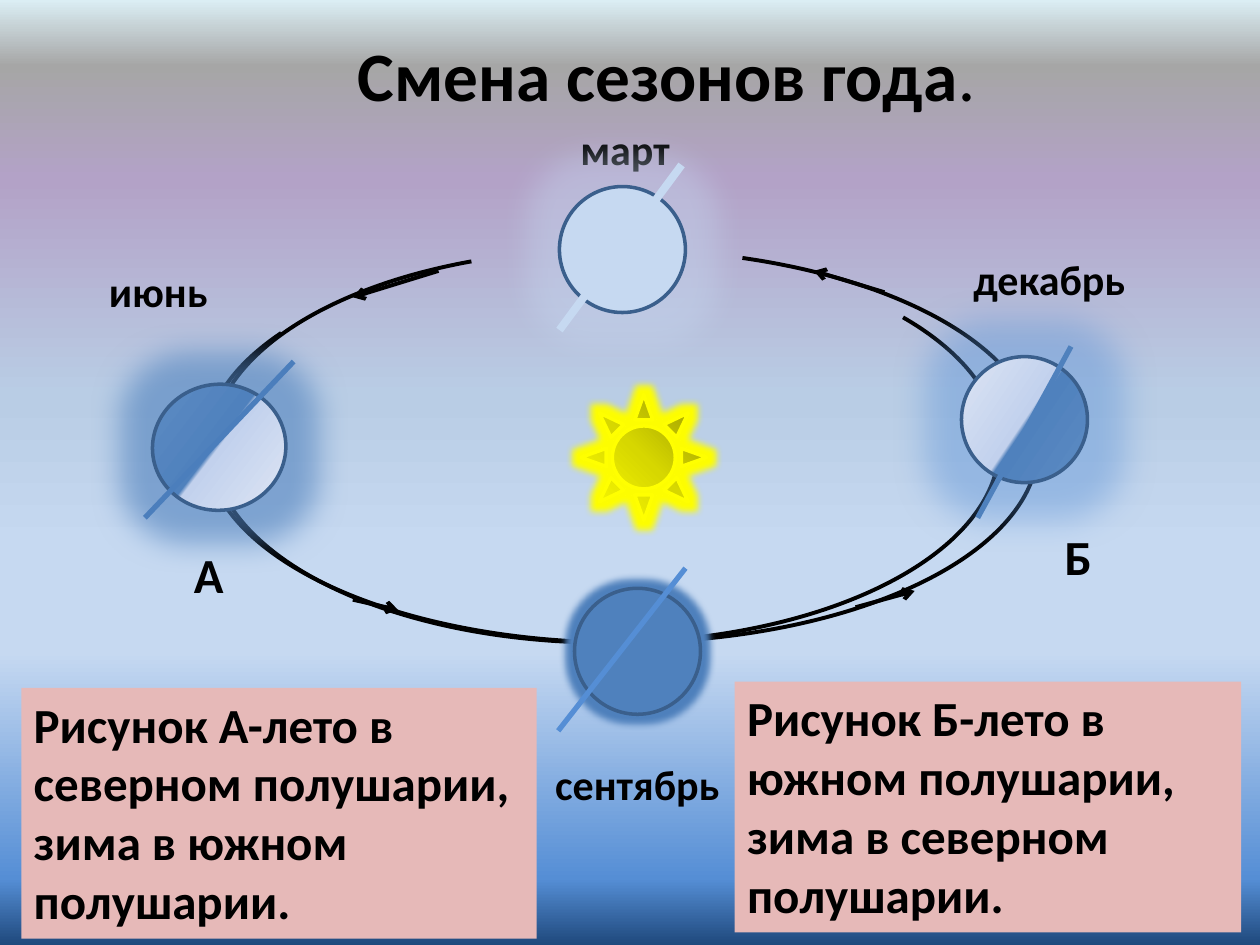
from lxml.etree import SubElement
from pptx import Presentation
from pptx.dml.color import RGBColor
from pptx.enum.shapes import MSO_CONNECTOR, MSO_SHAPE
from pptx.enum.text import MSO_ANCHOR, PP_ALIGN
from pptx.oxml.ns import qn
from pptx.util import Pt


def color(value):
    return RGBColor.from_string(value)


def set_gradient(fill, element, stops, angle):
    """Fill with (percent, colour) stops; the angle runs clockwise from the right."""
    fill.gradient()
    fill.gradient_angle = 360 - angle
    stop_list = next(element.iter(qn("a:gsLst")))
    for stop in list(stop_list):
        stop_list.remove(stop)
    for percent, value in stops:
        stop = SubElement(stop_list, qn("a:gs"), pos=str(percent * 1000))
        SubElement(stop, qn("a:srgbClr"), val=value)


deck = Presentation()
deck.slide_width, deck.slide_height = Pt(720), Pt(540)
page = deck.slides.add_slide(deck.slide_layouts[6])

sky = [(0, "1F497D"), (7, "558ED5"), (31, "C6D9F1"), (42, "C6D9F1"), (58, "B9CDE5"),
       (81, "B3A2C7"), (93, "A6A6A6"), (100, "DBEEF4")]
sunlight = [(0, "979700"), (50, "D7D700"), (100, "FFFF00")]
day_and_night = [(6, "5D8BC3"), (48, "4F81BD"), (50, "C2D1ED"), (100, "E1E8F5")]
set_gradient(page.background.fill, page._element, sky, 270)

# Orbit: left, top, width, height, start and end angle, rotation, flipped
orbit = [
    (117.4, 142.6, 475.9, 224.6, 161.64, 57.34, 0, True),
    (121, 142.6, 450, 224.6, 156.6, 54.02, 180, False),
]
for left, top, width, height, start, end, rotation, flipped in orbit:
    arc = page.shapes.add_shape(MSO_SHAPE.ARC, Pt(left), Pt(top), Pt(width), Pt(height))
    # Angles are stored in 1/60000 degree, adjustments in 1/100000
    arc.adjustments[0], arc.adjustments[1] = start * 0.6, end * 0.6
    arc.rotation = rotation
    if flipped:
        arc._element.spPr.find(qn("a:xfrm")).set("flipV", "1")
    arc.fill.background()
    arc.line.color.rgb = color("000000")
    arc.line.width = Pt(2.25)
    arc.shadow.inherit = False

# Month labels: text, left, top, width
months = [
    ("март", 319, 67, 282),
    ("декабрь", 543.6, 141.1, 113),
    ("июнь", 49.7, 148.3, 77),
    ("сентябрь", 304.6, 429.8, 115.2),
]
# Letters under the globes: text, left, top, width
letters = [("Б", 601.2, 297.4, 30.2), ("А", 103.7, 307.4, 28.1)]
labels = [(*month, 36, 24, 12.6) for month in months]
labels += [(*letter, 41.2, 28, 7.2) for letter in letters]
for text, left, top, width, height, size, inset in labels:
    box = page.shapes.add_textbox(Pt(left), Pt(top), Pt(width), Pt(height))
    frame = box.text_frame
    frame.word_wrap = text == "март"
    frame.margin_left = Pt(inset)
    span = frame.paragraphs[0].add_run()
    span.text = text
    span.font.name, span.font.size, span.font.bold = "Calibri", Pt(size), True
    span.font.color.rgb = color("000000")

# Sun and globes: shape, left, top, width, rotation, fill, gradient angle, line,
# glow colour, glow radius, glow opacity in percent
bodies = [
    (MSO_SHAPE.SUN, 331.9, 225.4, 72, 0, sunlight, 135, "FFFF00", "FFFF00", 8, 100),
    (MSO_SHAPE.OVAL, 549.4, 203.8, 72, 168.9, day_and_night, 45, "3A5F8C", "558ED5", 40, 40),
    (MSO_SHAPE.OVAL, 319.7, 106.6, 72, 0, "C6D9F1", 0, "3A5F8C", "C6D9F1", 35, 40),
    (MSO_SHAPE.OVAL, 87.1, 219.6, 76.3, 352.4, day_and_night, 45, "3A5F8C", "4F81BD", 35, 60),
    (MSO_SHAPE.OVAL, 328.3, 336.2, 72, 0, "4F81BD", 0, "3A5F8C", "4F81BD", 8, 100),
]
for kind, left, top, width, rotation, paint, angle, outline, halo, radius, opacity in bodies:
    body = page.shapes.add_shape(kind, Pt(left), Pt(top), Pt(width), Pt(72))
    body.rotation = rotation
    if isinstance(paint, str):
        body.fill.solid()
        body.fill.fore_color.rgb = color(paint)
    else:
        set_gradient(body.fill, body._element, paint, angle)
    body.line.color.rgb = color(outline)
    body.line.width = Pt(2)
    body.shadow.inherit = False
    effects = body._element.spPr.find(qn("a:effectLst"))
    glow = SubElement(effects, qn("a:glow"), rad=str(Pt(radius)))
    tint = SubElement(glow, qn("a:srgbClr"), val=halo)
    SubElement(tint, qn("a:alpha"), val=str(opacity * 1000))

# Axes and direction arrows: start x, y, end x, y, colour, width, arrowhead
axes = [
    (389.5, 94.3, 319.7, 188.6, "C6D9F1", 4.5, False),
    (167.8, 206.6, 82.8, 295.9, "4B7EBC", 3, False),
    (391.7, 324.7, 319, 417.6, "558ED5", 3, False),
    (612, 198, 558.7, 295.9, "4F81BD", 3, False),
]
directions = [
    (505.4, 167, 465.1, 154.8),
    (250.6, 154.8, 201.6, 169.9),
    (201.6, 342.7, 227.5, 348.5),
    (488.9, 347, 522.7, 337.7),
]
lines = axes + [(*ends, "000000", 2.25, True) for ends in directions]
for x1, y1, x2, y2, value, width, arrowhead in lines:
    line = page.shapes.add_connector(MSO_CONNECTOR.STRAIGHT, Pt(x1), Pt(y1), Pt(x2), Pt(y2))
    line.line.color.rgb = color(value)
    line.line.width = Pt(width)
    if arrowhead:
        SubElement(line.line._get_or_add_ln(), qn("a:tailEnd"), type="arrow")
    SubElement(line._element.spPr, qn("a:effectLst"))

title = page.shapes.add_textbox(0, Pt(21.6), Pt(648), Pt(41))
frame = title.text_frame
frame.word_wrap = True
frame.vertical_anchor = MSO_ANCHOR.MIDDLE
frame.margin_left = Pt(121)
para = frame.paragraphs[0]
para.alignment = PP_ALIGN.CENTER
for text, bold in [("Смена сезонов года", True), (".", False)]:
    span = para.add_run()
    span.text = text
    span.font.name, span.font.size, span.font.bold = "Calibri", Pt(39.6), bold
    span.font.color.rgb = color("000000")

captions = [
    ("Рисунок Б-лето в южном полушарии, зима в северном полушарии.", 419.8, 389.5, 289.4),
    ("Рисунок А-лето в северном полушарии, зима в южном полушарии.", 12.2, 393.1, 294.5),
]
for text, left, top, width in captions:
    caption = page.shapes.add_shape(MSO_SHAPE.RECTANGLE, Pt(left), Pt(top), Pt(width), Pt(143.3))
    caption.fill.solid()
    caption.fill.fore_color.rgb = color("E6B9B8")
    caption.line.fill.background()
    caption.shadow.inherit = False
    frame = caption.text_frame
    frame.word_wrap = True
    frame.vertical_anchor = MSO_ANCHOR.TOP
    para = frame.paragraphs[0]
    para.alignment = PP_ALIGN.LEFT
    span = para.add_run()
    span.text = text
    span.font.name, span.font.size, span.font.bold = "Calibri", Pt(28), True
    span.font.color.rgb = color("000000")

deck.save("out.pptx")
